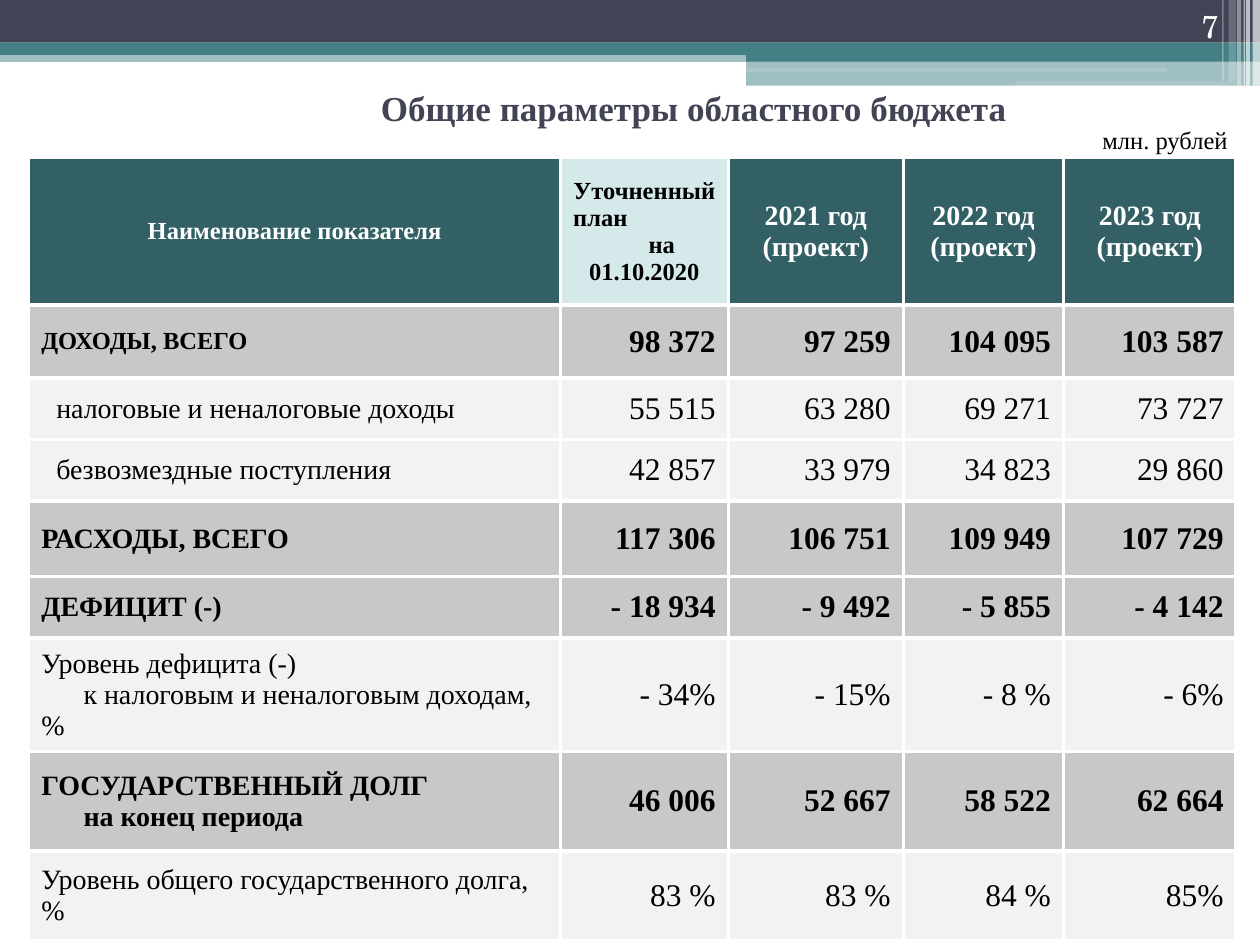
import collections

import lxml.etree
import pptx
import pptx.dml.color
import pptx.enum.shapes
import pptx.enum.text
import pptx.oxml.ns
import pptx.util

Cm = pptx.util.Cm
ALIGN = pptx.enum.text.PP_ALIGN
ANCHOR = pptx.enum.text.MSO_ANCHOR
SHAPE = pptx.enum.shapes.MSO_SHAPE
SERIF = "Times New Roman"
NAVY, TEAL, WHITE, BLACK = "424456", "438086", "FFFFFF", "000000"
DARK_TEAL, PALE_TEAL, GREY, LIGHT = "326065", "D6E9EA", "C8C8C8", "F2F2F2"
Box = collections.namedtuple("Box", "left top width height")

COLUMNS = [10.72, 3.38, 3.53, 3.23, 3.48]
ROW_HEIGHTS = [2.97, 1.47, 1.24, 1.24, 1.52, 1.24, 1.52, 2.01, 1.8]
YEARS = ["2021 год", "2022 год", "2023 год"]
ROWS = [
    ("ДОХОДЫ, ВСЕГО", True, 0, ["98 372", "97 259", "104 095", "103 587"]),
    ("налоговые и неналоговые доходы", False, 0.3, ["55 515", "63 280", "69 271", "73 727"]),
    ("безвозмездные поступления", False, 0.3, ["42 857", "33 979", "34 823", "29 860"]),
    ("РАСХОДЫ, ВСЕГО", True, 0, ["117 306", "106 751", "109 949", "107 729"]),
    ("ДЕФИЦИТ (-)", True, 0, ["- 18 934", "- 9 492", "- 5 855", "- 4 142"]),
    ("Уровень дефицита (-)\nк налоговым и неналоговым доходам, %", False, 0,
     ["- 34%", "- 15%", "- 8 %", "- 6%"]),
    ("ГОСУДАРСТВЕННЫЙ ДОЛГ\nна конец периода", True, 0, ["46 006", "52 667", "58 522", "62 664"]),
    ("Уровень общего государственного долга, %", False, 0, ["83 %", "83 %", "84 %", "85%"]),
]


def rgb(value):
    """Turn a hex string into a colour."""
    return pptx.dml.color.RGBColor.from_string(value)


def write(frame, text, size, colour, bold=False, align=ALIGN.LEFT, font=SERIF):
    """Fill a text frame and format all its runs."""
    frame.text = text
    frame.word_wrap = True
    for para in frame.paragraphs:
        para.alignment = align
        for span in para.runs:
            span.font.name = font
            span.font.size = pptx.util.Pt(size)
            span.font.bold = bold
            span.font.color.rgb = rgb(colour)


def add_bar(page, box, colour, opacity=100, kind=SHAPE.RECTANGLE):
    """Add a borderless bar with the given opacity in percent."""
    bar = page.shapes.add_shape(kind, *map(Cm, box))
    bar.shadow.inherit = False
    bar.line.fill.background()
    bar.fill.solid()
    bar.fill.fore_color.rgb = rgb(colour)
    if opacity < 100:
        tint = bar.fill._xPr.find(".//" + pptx.oxml.ns.qn("a:srgbClr"))
        lxml.etree.SubElement(tint, pptx.oxml.ns.qn("a:alpha"), val=str(opacity * 1000))


def add_caption(page, box, text, size, colour, anchor, **style):
    """Add a text box with one formatted line."""
    frame = page.shapes.add_textbox(*map(Cm, box)).text_frame
    frame.vertical_anchor = anchor
    write(frame, text, size, colour, **style)


def add_header(page, box):
    """Draw the header bands, the corner stripes and the page number."""
    left, top, width, height = box
    right = left + width
    half = right - 10.36
    add_bar(page, Box(left, top + 1.02, width, 0.23), TEAL, 50)
    add_bar(page, Box(left, top, width, 0.86), NAVY)
    add_bar(page, Box(left, top + 0.86, width, 0.25), TEAL)
    add_bar(page, Box(half, top + 0.99, 10.36, 0.25), TEAL)
    add_bar(page, Box(half, top + 1.22, 10.36, 0.51), TEAL, 50)
    add_bar(page, Box(half - 0.03, top + 1.37, 8.51, 0.08), WHITE, 11, SHAPE.ROUNDED_RECTANGLE)
    add_bar(page, Box(right - 4.93, top + 1.63, 4.45, 0.1), WHITE, 11, SHAPE.ROUNDED_RECTANGLE)
    stripes = [(0.15, 0.15, 0, 65), (0.28, 0.08, 0, 65), (0.33, 0.03, 0, 60),
               (0.46, 0.08, 0, 40), (0.63, 0.15, 0.1, 20), (0.76, 0.03, 0.1, 30)]
    for offset, thickness, gap, opacity in stripes:
        add_bar(page, Box(right - offset, top, thickness, height - gap), WHITE, opacity)
    add_caption(page, Box(right - 2.69, top, 2.11, 1.02), "7", 18, WHITE, ANCHOR.BOTTOM,
                align=ALIGN.RIGHT, font="TeX Gyre Schola")


def add_titles(page, box):
    """Place the slide title and the unit of measure."""
    left, top, width, height = box
    add_caption(page, Box(left, top, width, 1.19), "Общие параметры областного бюджета",
                20, NAVY, ANCHOR.MIDDLE, bold=True, align=ALIGN.CENTER)
    add_caption(page, Box(left + width - 2.97, top + height - 0.86, 3.76, 0.86),
                "млн. рублей", 14, BLACK, ANCHOR.TOP, align=ALIGN.RIGHT)


def fill_cell(cell, fill, text, size, colour, bold, align):
    """Give a cell its white borders, fill and text."""
    properties = cell._tc.get_or_add_tcPr()
    for side in ("lnL", "lnR", "lnT", "lnB"):
        line = lxml.etree.SubElement(properties, pptx.oxml.ns.qn("a:" + side), w="28575")
        solid = lxml.etree.SubElement(line, pptx.oxml.ns.qn("a:solidFill"))
        lxml.etree.SubElement(solid, pptx.oxml.ns.qn("a:srgbClr"), val=WHITE)
    cell.fill.solid()
    cell.fill.fore_color.rgb = rgb(fill)
    cell.vertical_anchor = ANCHOR.MIDDLE
    write(cell.text_frame, text, size, colour, bold, align)


def indent(para, margin=0.0, first=0.0):
    """Set the left margin and first-line indent of a paragraph."""
    properties = para._p.get_or_add_pPr()
    properties.set("marL", str(Cm(margin)))
    properties.set("indent", str(Cm(first)))


def add_budget_table(page, box):
    """Build the table of budget figures."""
    table = page.shapes.add_table(len(ROW_HEIGHTS), len(COLUMNS), *map(Cm, box)).table
    for column, width in zip(table.columns, COLUMNS):
        column.width = Cm(width)
    for row, height in zip(table.rows, ROW_HEIGHTS):
        row.height = Cm(height)

    fill_cell(table.cell(0, 0), DARK_TEAL, "Наименование показателя", 14, WHITE, True, ALIGN.CENTER)
    plan = table.cell(0, 1)
    fill_cell(plan, PALE_TEAL, "Уточненный\nплан\nна\n01.10.2020", 14, BLACK, True, ALIGN.CENTER)
    plan.text_frame.paragraphs[1].alignment = ALIGN.LEFT
    indent(plan.text_frame.paragraphs[2], margin=0.7)
    for column, year in enumerate(YEARS, 2):
        fill_cell(table.cell(0, column), DARK_TEAL, year + "\n(проект)", 16, WHITE, True, ALIGN.CENTER)

    for number, (label, total, margin, values) in enumerate(ROWS, 1):
        fill = GREY if total else LIGHT
        name = table.cell(number, 0)
        size = 14 if number == 1 else 16
        fill_cell(name, fill, label, size, BLACK, total, ALIGN.LEFT)
        indent(name.text_frame.paragraphs[0], margin=margin)
        for para in name.text_frame.paragraphs[1:]:
            indent(para, first=0.85)
        for column, value in enumerate(values, 1):
            fill_cell(table.cell(number, column), fill, value, 18, BLACK, total, ALIGN.RIGHT)


def main():
    """Assemble the slide and save it."""
    deck = pptx.Presentation()
    deck.slide_width, deck.slide_height = Cm(25.4), Cm(19.05)
    page = deck.slides.add_slide(deck.slide_layouts[6])
    add_header(page, Box(0, 0, 25.4, 1.73))
    add_budget_table(page, Box(0.58, 3.18, sum(COLUMNS), sum(ROW_HEIGHTS)))
    add_titles(page, Box(3.76, 1.57, 20.45, 1.68))
    deck.save("out.pptx")


if __name__ == "__main__":
    main()
